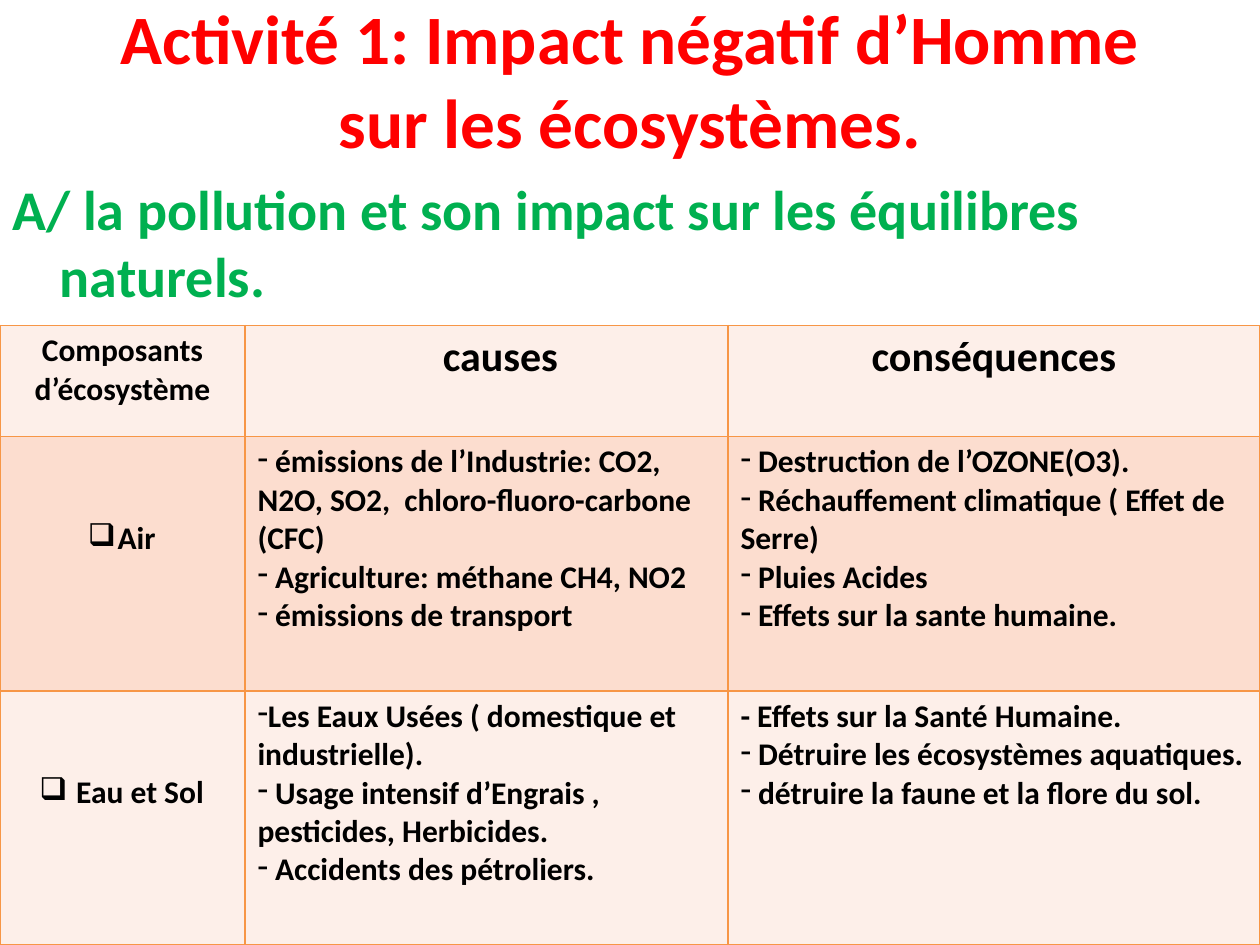
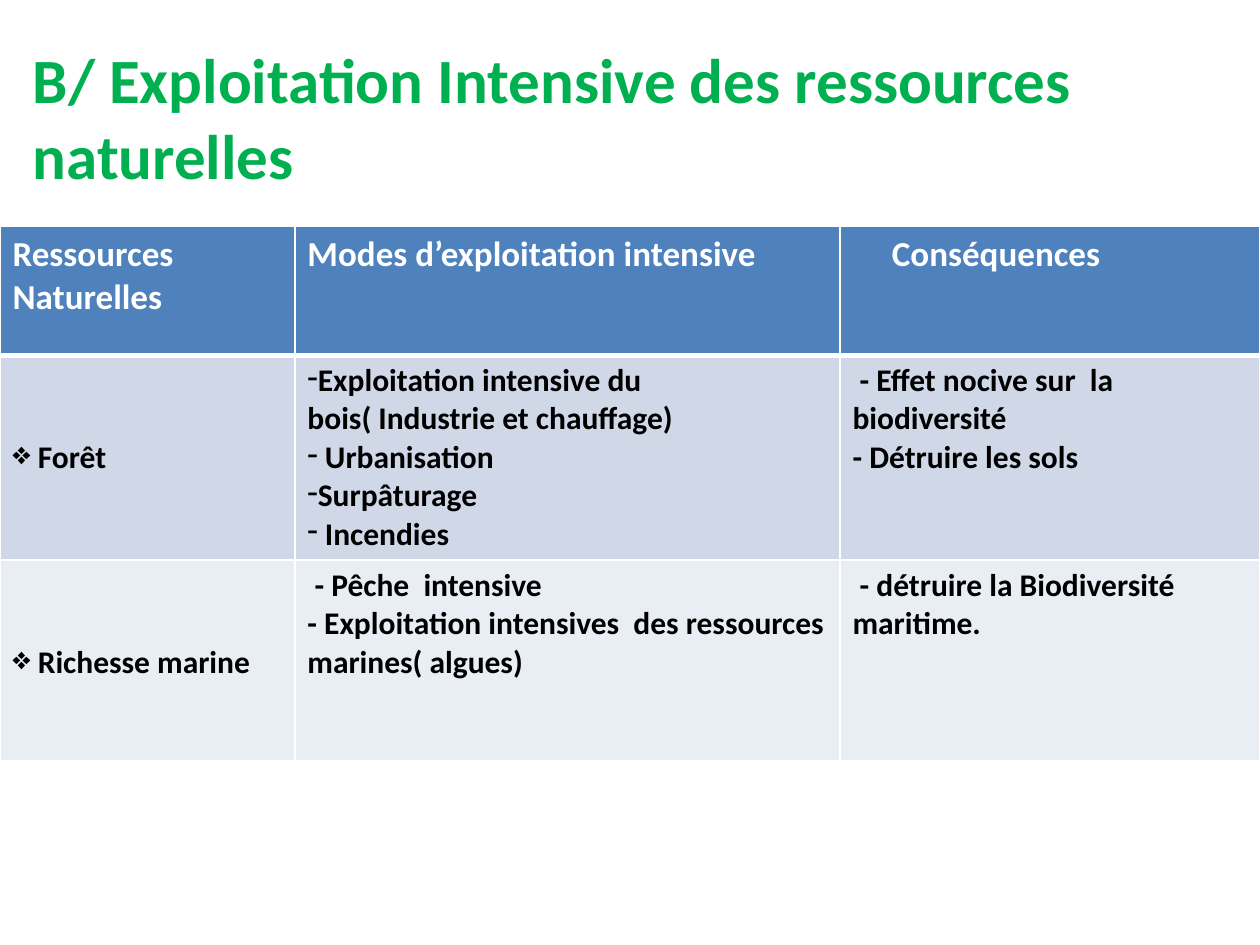
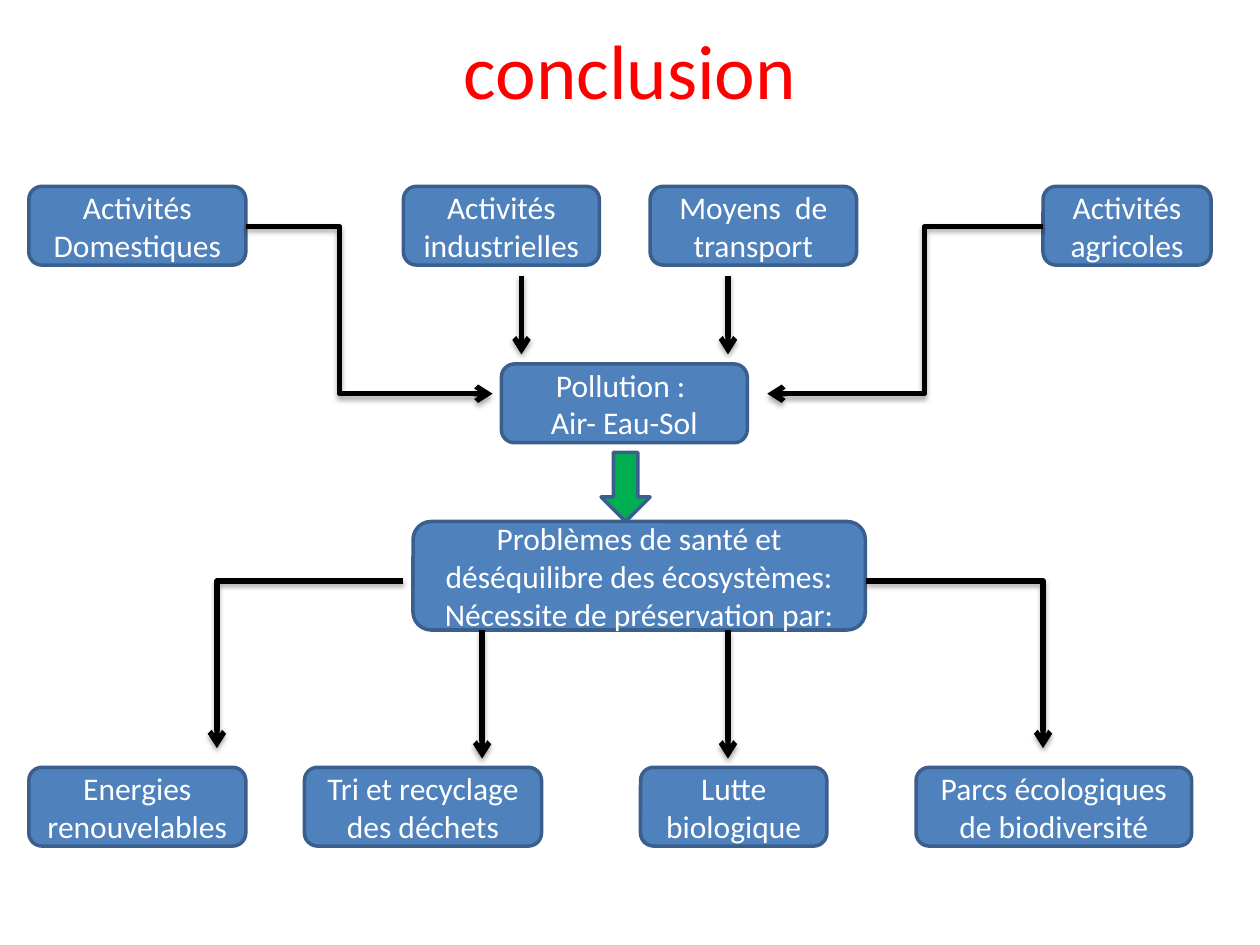
import pptx
import pptx.dml.color
import pptx.enum.shapes
import pptx.enum.text
import pptx.oxml
import pptx.oxml.ns
import pptx.util

Pt = pptx.util.Pt
ALIGN = pptx.enum.text.PP_ALIGN
SHAPES = pptx.enum.shapes.MSO_SHAPE
CONNECTORS = pptx.enum.shapes.MSO_CONNECTOR

FONT = "Calibri"
COLORS = {
    "red": "FF0000", "green": "00B050", "black": "000000", "white": "FFFFFF",
    "blue": "4F81BD", "navy": "3A5F8C", "orange": "F79646",
    "peach": "FCDDCF", "cream": "FDEFE9", "steel": "D0D8E8", "mist": "E9EDF4",
}

# In table cells, the text before "|" is the bullet of the line.
POLLUTION = {
    "top": 186, "columns": (140, 276, 304), "rows": (63.5, 145.25, 145.25),
    "fills": ("cream", "peach", "cream"), "border": "orange", "rule": 1,
    "header": [("Composants d’écosystème", 18, 0), ("causes", 24, 16), ("conséquences", 24, 0)],
    "header_color": "black", "label_align": ALIGN.CENTER, "header_align": ALIGN.CENTER,
    "body": [
        [["❑|Air"],
         ["-| émissions de l’Industrie: CO2, N2O, SO2,  chloro-fluoro-carbone (CFC)",
          "-| Agriculture: méthane CH4, NO2",
          "-| émissions de transport"],
         ["-| Destruction de l’OZONE(O3).",
          "-| Réchauffement climatique ( Effet de Serre)",
          "-| Pluies Acides",
          "-| Effets sur la sante humaine."]],
        [["❑| Eau et Sol"],
         ["-|Les Eaux Usées ( domestique et industrielle).",
          "-| Usage intensif d’Engrais , pesticides, Herbicides.",
          "-| Accidents des pétroliers."],
         ["- Effets sur la Santé Humaine.",
          "-| Détruire les écosystèmes aquatiques.",
          "-| détruire la faune et la flore du sol."]],
    ],
}
RESOURCES = {
    "top": 129.5, "columns": (168.5, 311.5, 240), "rows": (73.5, 114.5, 114.5),
    "fills": ("blue", "steel", "mist"), "border": "white", "rule": 3,
    "header": [("Ressources Naturelles", 20, 0), ("Modes d’exploitation intensive", 20, 0),
               ("Conséquences", 20, 22.5)],
    "header_color": "white", "label_align": ALIGN.LEFT, "header_align": ALIGN.LEFT,
    "body": [
        [["❖| Forêt"],
         ["-|Exploitation intensive du bois( Industrie et chauffage)",
          "-| Urbanisation", "-|Surpâturage", "-| Incendies"],
         [" - Effet nocive sur  la biodiversité", "- Détruire les sols"]],
        [["❖| Richesse marine"],
         [" - Pêche  intensive",
          "- Exploitation intensives  des ressources marines( algues)"],
         [" - détruire la Biodiversité maritime."]],
    ],
}
LABEL_TOP = 47.5  # drops a row label to the third line of its row

BOX_HEIGHT = 45
ROWS_OF_BOXES = [
    (106.5, [("Activités Domestiques", 16.5, 124), ("Activités industrielles", 230.5, 112),
             ("Moyens  de transport", 371.5, 118), ("Activités agricoles", 596, 96)]),
    (208, [("Pollution : \nAir- Eau-Sol", 286.5, 140.5)]),
    (438.5, [("Energies renouvelables", 16.5, 124), ("Tri et recyclage des déchets", 174, 135.5),
             ("Lutte biologique", 366, 106.5), ("Parcs écologiques de biodiversité", 523.5, 157.5)]),
]
PROBLEM = ("Problèmes de santé et déséquilibre des écosystèmes:\nNécessite de préservation par:",
           236, 298, 258.5, 62)
GREEN_ARROW = (343.5, 258.5, 28, 39.5)
# start x, start y, end x, end y, share of the width before the bend (None: straight)
ARROWS = [
    (140.5, 129.5, 281.5, 225, 0.38), (298, 157.5, 298, 202.5, None),
    (416, 157.5, 416, 202.5, None), (596, 129.5, 438.5, 225, 0.43),
    (275.5, 360, 275.5, 433.5, None), (416, 360, 416, 433.5, None),
    (230.5, 332, 124, 427.5, 1), (495, 332, 596, 427.5, 1),
]


def color(name):
    return pptx.dml.color.RGBColor.from_string(COLORS[name])


def xml(text):
    """Parse a snippet whose root carries {ns} for the drawing namespace."""
    return pptx.oxml.parse_xml(text.replace("{ns}", pptx.oxml.ns.nsdecls("a")))


def style(para, size, ink, bold=False, align=ALIGN.LEFT):
    para.alignment = align
    para.font.name = FONT
    para.font.size = Pt(size)
    para.font.bold = bold
    para.font.color.rgb = color(ink)


def place(shape, left, top, width, height):
    shape.left, shape.top, shape.width, shape.height = map(Pt, (left, top, width, height))


def add_page(deck, layout, title, area, size, ink, bold=True, align=ALIGN.CENTER):
    page = deck.slides.add_slide(deck.slide_layouts[layout])
    heading = page.shapes.title
    place(heading, *area)
    heading.text_frame.text = title
    style(heading.text_frame.paragraphs[0], size, ink, bold, align)
    return page


def add_bullet(para, mark):
    properties = para._p.get_or_add_pPr()
    bullet = [xml("<a:buFontTx {ns}/>"), xml(f'<a:buChar {{ns}} char="{mark}"/>')]
    for position, element in enumerate(bullet):
        properties.insert(position, element)


def set_borders(cell, ink, top, bottom):
    properties = cell._tc.get_or_add_tcPr()
    for position, (side, width) in enumerate((("L", 1), ("R", 1), ("T", top), ("B", bottom))):
        properties.insert(position, xml(
            f'<a:ln{side} {{ns}} w="{Pt(width)}"><a:solidFill>'
            f'<a:srgbClr val="{COLORS[ink]}"/></a:solidFill></a:ln{side}>'))


def add_grid(page, grid):
    widths, heights = grid["columns"], grid["rows"]
    table = page.shapes.add_table(len(heights), len(widths), 0, Pt(grid["top"]),
                                  Pt(sum(widths)), Pt(sum(heights))).table
    table.first_row = grid["header_color"] == "white"
    table.horz_banding = False
    for column, width in zip(table.columns, widths):
        column.width = Pt(width)
    for number, (row, height) in enumerate(zip(table.rows, heights)):
        row.height = Pt(height)
        for cell in row.cells:
            cell.fill.solid()
            cell.fill.fore_color.rgb = color(grid["fills"][number])
            set_borders(cell, grid["border"], grid["rule"] if number == 1 else 1,
                        grid["rule"] if number == 0 else 1)
    for cell, (text, size, indent) in zip(table.rows[0].cells, grid["header"]):
        cell.text = text
        para = cell.text_frame.paragraphs[0]
        style(para, size, grid["header_color"], True, grid["header_align"])
        para._p.get_or_add_pPr().set("marL", str(Pt(indent)))
    for number, contents in enumerate(grid["body"], 1):
        for column, lines in enumerate(contents):
            fill_cell(table.cell(number, column), lines,
                      grid["label_align"] if column == 0 else ALIGN.LEFT)
        table.cell(number, 0).margin_top = Pt(LABEL_TOP)


def fill_cell(cell, lines, align):
    parts = [line.rpartition("|") for line in lines]
    cell.text = "\n".join(text for _, _, text in parts)
    for para, (mark, _, _) in zip(cell.text_frame.paragraphs, parts):
        style(para, 18, "black", True, align)
        if mark:
            add_bullet(para, mark)


def add_block(page, kind, area, fill, text=""):
    box = page.shapes.add_shape(kind, *map(Pt, area))
    box.shadow.inherit = False
    box.fill.solid()
    box.fill.fore_color.rgb = color(fill)
    box.line.color.rgb = color("navy")
    box.line.width = Pt(2)
    if text:
        box.text_frame.text = text
        box.text_frame.word_wrap = True
        for para in box.text_frame.paragraphs:
            style(para, 18, "white", align=ALIGN.CENTER)


def add_arrow(page, start_x, start_y, end_x, end_y, bend):
    kind = CONNECTORS.STRAIGHT if bend is None else CONNECTORS.ELBOW
    arrow = page.shapes.add_connector(kind, *map(Pt, (start_x, start_y, end_x, end_y)))
    arrow.line.color.rgb = color("black")
    arrow.line.width = Pt(3)
    arrow.line._get_or_add_ln().append(xml('<a:tailEnd {ns} type="arrow"/>'))
    properties = arrow._element.spPr
    properties.append(xml(
        f'<a:effectLst {{ns}}><a:outerShdw blurRad="{Pt(3.1)}" dist="{Pt(1.8)}" dir="5400000" '
        f'rotWithShape="0"><a:srgbClr val="{COLORS["black"]}"><a:alpha val="35000"/></a:srgbClr>'
        '</a:outerShdw></a:effectLst>'))
    if bend is not None:
        geometry = properties.find(pptx.oxml.ns.qn("a:prstGeom"))
        for old in list(geometry):
            geometry.remove(old)
        geometry.append(xml(f'<a:avLst {{ns}}><a:gd name="adj1" '
                            f'fmla="val {round(bend * 100000)}"/></a:avLst>'))


def add_pollution(deck):
    page = add_page(deck, 1, "Activité 1: Impact négatif d’Homme sur les écosystèmes.",
                    (36, 0, 648, 90), 39.6, "red")
    body = page.placeholders[1]
    place(body, 0, 96, 720, 444)
    body.text_frame.text = "A/ la pollution et son impact sur les équilibres naturels."
    para = body.text_frame.paragraphs[0]
    style(para, 32, "green", True)
    para._p.get_or_add_pPr().insert(0, xml("<a:buNone {ns}/>"))
    add_grid(page, POLLUTION)


def add_resources(deck):
    page = add_page(deck, 5, "B/ Exploitation Intensive des ressources naturelles",
                    (11.5, 21.5, 672.5, 90), 36, "green", align=ALIGN.LEFT)
    add_grid(page, RESOURCES)


def add_conclusion(deck):
    page = add_page(deck, 5, "conclusion", (36, -6, 648, 90), 44, "red", bold=False)
    for top, boxes in ROWS_OF_BOXES:
        for text, left, width in boxes:
            add_block(page, SHAPES.ROUNDED_RECTANGLE, (left, top, width, BOX_HEIGHT), "blue", text)
    text, *area = PROBLEM
    add_block(page, SHAPES.ROUNDED_RECTANGLE, area, "blue", text)
    add_block(page, SHAPES.DOWN_ARROW, GREEN_ARROW, "green")
    for arrow in ARROWS:
        add_arrow(page, *arrow)


def main():
    deck = pptx.Presentation()
    deck.slide_width, deck.slide_height = Pt(720), Pt(540)
    add_pollution(deck)
    add_resources(deck)
    add_conclusion(deck)
    deck.save("out.pptx")


if __name__ == "__main__":
    main()
